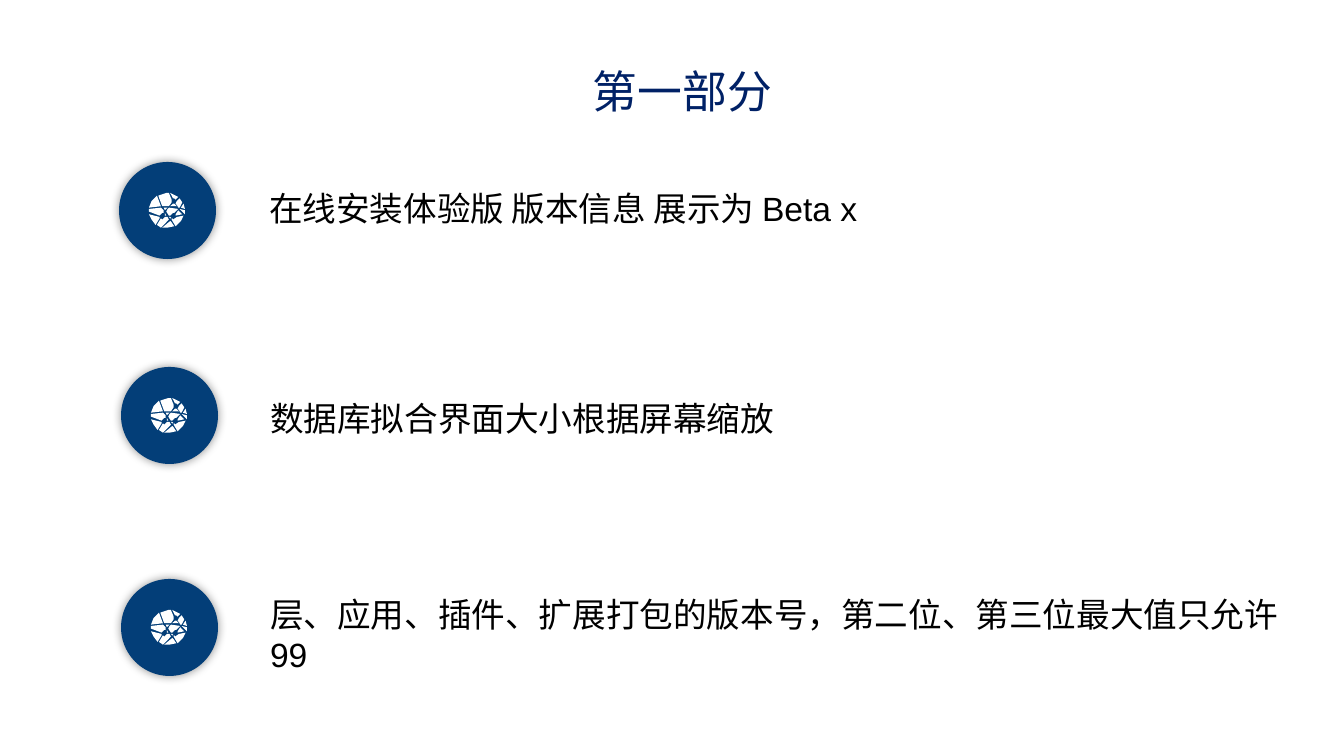
"""Build a title slide section with three globe-marked release notes."""
import pptx
import pptx.util
import pptx.dml.color
import pptx.enum.shapes
import pptx.enum.text
import pptx.oxml
import pptx.oxml.ns
from dataclasses import dataclass

PX = 914400 / 134.4


@dataclass(frozen=True)
class Theme:
    navy: str = "002166"
    badge: str = "033E78"
    white: str = "FFFFFF"
    black: str = "000000"
    title_font: str = "Noto Sans CJK SC"
    body_font: str = "Arial"
    title_size: int = 24
    body_size: int = 18


theme = Theme()
BADGE_SIZE = 97
GLOBE_SIZE = 36
GLOBE_UNITS = 27
GLOBE_PIECES = [
    [(16, 21), (17, 22), (19, 25), (14, 26), (10, 26)],
    [(15, 18), (16, 18), (17, 19), (16, 19)],
    [(12, 18), (14, 18), (15, 20), (9, 26), (6, 24), (9, 19), (10, 20)],
    [(26, 17), (24, 21), (20, 25), (17, 20), (18, 19), (18, 20), (21, 18)],
    [(0, 16), (8, 18), (8, 19), (5, 24), (2, 20)],
    [(12, 15), (13, 17), (12, 17), (12, 16)],
    [(22, 13), (25, 16), (20, 17), (20, 16)],
    [(23, 12), (27, 13), (27, 16)],
    [(9, 11), (11, 13), (11, 15), (10, 15), (8, 17), (0, 14), (0, 12)],
    [(15, 11), (22, 12), (19, 15), (18, 15), (16, 17), (15, 17), (13, 14), (14, 12)],
    [(14, 11), (13, 12), (12, 13), (11, 11)],
    [(18, 8), (19, 8), (20, 9), (21, 10), (16, 10)],
    [(26, 8), (27, 12), (24, 11)],
    [(23, 4), (25, 7), (23, 11), (22, 11), (21, 9), (20, 8), (21, 6)],
    [(6, 2), (9, 10), (0, 11), (2, 6)],
    [(16, 0), (22, 3), (20, 5), (19, 4), (18, 4)],
    [(13, 0), (15, 0), (17, 5), (17, 7), (15, 10), (10, 10), (7, 2)],
]
NOTES = [
    ((119, 162), (269, 188, 1042, 41), "在线安装体验版 版本信息 展示为 Beta x"),
    ((121, 367), (270, 398, 1042, 41), "数据库拟合界面大小根据屏幕缩放"),
    ((121, 579), (270, 594, 1036, 82),
     "层、应用、插件、扩展打包的版本号，第二位、第三位最大值只允许99"),
]


def px(*lengths):
    return [pptx.util.Emu(round(length * PX)) for length in lengths]


def write(frame, text, font, size, color, margins):
    frame.word_wrap = True
    frame.auto_size = pptx.enum.text.MSO_AUTO_SIZE.SHAPE_TO_FIT_TEXT
    frame.vertical_anchor = pptx.enum.text.MSO_ANCHOR.TOP
    frame.margin_left = frame.margin_right = px(margins[0])[0]
    frame.margin_top = frame.margin_bottom = px(margins[1])[0]
    run = frame.paragraphs[0].add_run()
    run.text = text
    run.font.name = font
    run.font.size = pptx.util.Pt(size)
    run.font.color.rgb = pptx.dml.color.RGBColor.from_string(color)
    return run


deck = pptx.Presentation()
deck.slide_width, deck.slide_height = px(1344, 756)
slide = deck.slides.add_slide(deck.slide_layouts[5])

heading = slide.shapes.title
heading.left, heading.top, heading.width, heading.height = px(439, 60, 487, 62)
heading_run = write(heading.text_frame, "第一部分", theme.title_font,
                    theme.title_size, theme.navy, (8, 4))
heading.text_frame.paragraphs[0].alignment = pptx.enum.text.PP_ALIGN.CENTER
east_asian = pptx.oxml.parse_xml(
    f'<a:ea {pptx.oxml.ns.nsdecls("a")} typeface="{theme.title_font}"/>')
heading_run.font._element.append(east_asian)

for (left, top), note_box, note_text in NOTES:
    marker = slide.shapes.add_group_shape()
    badge = marker.shapes.add_shape(pptx.enum.shapes.MSO_SHAPE.OVAL,
                                    *px(left, top, BADGE_SIZE, BADGE_SIZE))

    pen = marker.shapes.build_freeform(*GLOBE_PIECES[0][0],
                                       scale=GLOBE_SIZE * PX / GLOBE_UNITS)
    for piece in GLOBE_PIECES:
        pen.move_to(*piece[0])
        pen.add_line_segments(piece[1:], close=True)
    globe = pen.convert_to_shape(*px(left + 30, top + 31))

    for part, color in ((badge, theme.badge), (globe, theme.white)):
        part.shadow.inherit = False
        part.fill.solid()
        part.fill.fore_color.rgb = pptx.dml.color.RGBColor.from_string(color)
        part.line.fill.background()
    glow = pptx.oxml.parse_xml(
        f'<a:outerShdw {pptx.oxml.ns.nsdecls("a")} blurRad="63500" dist="0" dir="0" '
        f'algn="ctr" rotWithShape="0"><a:srgbClr val="{theme.black}">'
        '<a:alpha val="40000"/></a:srgbClr></a:outerShdw>')
    badge._element.spPr.find(pptx.oxml.ns.qn("a:effectLst")).append(glow)

    note = slide.shapes.add_textbox(*px(*note_box))
    write(note.text_frame, note_text, theme.body_font, theme.body_size, theme.black, (0, 0))

deck.save("out.pptx")
